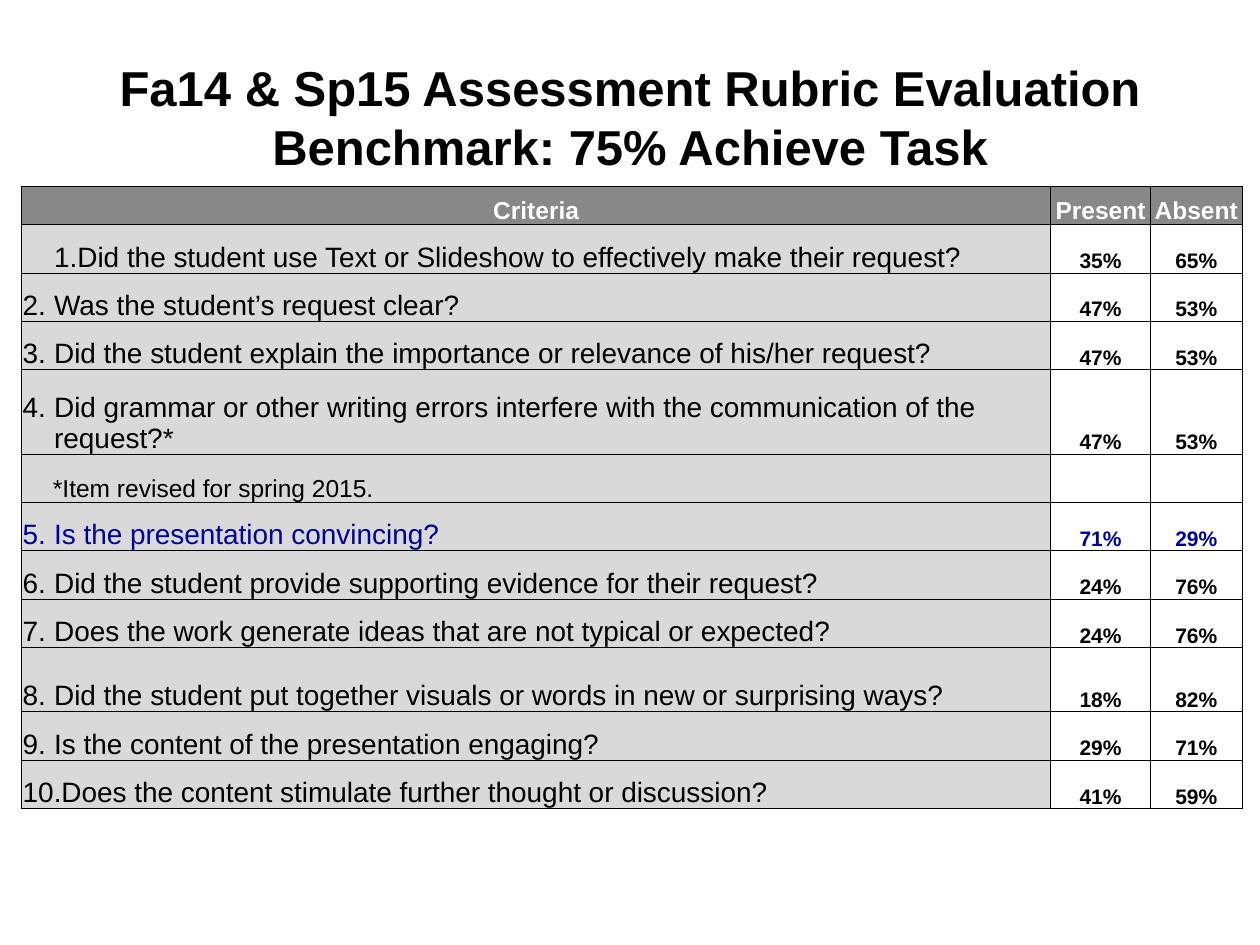
import dataclasses

import lxml.etree
import pptx
import pptx.dml.color
import pptx.enum.text
import pptx.oxml.ns
import pptx.util

ALIGN = pptx.enum.text.PP_ALIGN
ANCHOR = pptx.enum.text.MSO_ANCHOR
COLUMNS, ROWS = 100, 75

NOTE = "*Item revised for spring 2015."
HIGHLIGHT = "Is the presentation convincing?"
HEADER = ("Criteria", "Present", "Absent")
RESULTS = [
    ("Did the student use Text or Slideshow to effectively make their request?", "35%", "65%"),
    ("Was the student’s request clear?", "47%", "53%"),
    ("Did the student explain the importance or relevance of his/her request?", "47%", "53%"),
    ("Did grammar or other writing errors interfere with the communication of the request?*", "47%", "53%"),
    (NOTE, "", ""),
    (HIGHLIGHT, "71%", "29%"),
    ("Did the student provide supporting evidence for their request?", "24%", "76%"),
    ("Does the work generate ideas that are not typical or expected?", "24%", "76%"),
    ("Did the student put together visuals or words in new or surprising ways?", "18%", "82%"),
    ("Is the content of the presentation engaging?", "29%", "71%"),
    ("Does the content stimulate further thought or discussion?", "41%", "59%"),
]
COL_WIDTHS = (81.7, 7.9, 7.3)
HEADER_HEIGHT, ROW_HEIGHT = 3.03, 3.84
TALL_ROWS = {4: 6.7, 9: 5.1}


@dataclasses.dataclass(frozen=True)
class Theme:
    font: str = "Arial"
    ink: str = "000000"
    white: str = "FFFFFF"
    accent: str = "000099"
    header: str = "888888"
    criteria: str = "D9D9D9"
    title_size: int = 28
    item_size: int = 16
    small_size: int = 14
    value_size: int = 12
    thin: float = 0.5
    thick: float = 1


class Deck:
    """Builds slide elements on a grid in one theme."""

    def __init__(self, prs, theme):
        self.prs, self.theme = prs, theme
        self.slide = prs.slides.add_slide(prs.slide_layouts[6])

    def x(self, columns):
        return round(self.prs.slide_width * columns / COLUMNS)

    def y(self, rows):
        return round(self.prs.slide_height * rows / ROWS)

    def text(self, tf, text, size, color, bold=False, align=ALIGN.CENTER):
        p = tf.paragraphs[0]
        p.text = text
        p.alignment = align
        for r in p.runs:
            r.font.name, r.font.size, r.font.bold = self.theme.font, pptx.util.Pt(size), bold
            r.font.color.rgb = pptx.dml.color.RGBColor.from_string(color)
        return p

    def title(self, left, top, width, height, text):
        sp = self.slide.shapes.add_textbox(self.x(left), self.y(top), self.x(width), self.y(height))
        tf = sp.text_frame
        tf.word_wrap = True
        tf.vertical_anchor = ANCHOR.MIDDLE
        self.text(tf, text, self.theme.title_size, self.theme.ink, True)

    def table(self, left, top, widths, heights):
        frame = self.slide.shapes.add_table(
            len(heights), len(widths), self.x(left), self.y(top), self.x(sum(widths)), self.y(sum(heights)))
        table = frame.table
        table.first_row = table.horz_banding = False
        for column, width in zip(table.columns, widths):
            column.width = self.x(width)
        for row, height in zip(table.rows, heights):
            row.height = self.y(height)
        return table

    def cell(self, table, row, col, fill):
        cell = table.cell(row, col)
        cell.vertical_anchor = ANCHOR.BOTTOM
        cell.margin_left = cell.margin_right = cell.margin_top = pptx.util.Inches(0.01)
        cell.margin_bottom = 0
        thick_sides = {"L": col == 0, "T": row == 0}
        for side in "LRTB":
            self.border(cell, side, self.theme.thick if thick_sides.get(side) else self.theme.thin)
        cell.fill.solid()
        cell.fill.fore_color.rgb = pptx.dml.color.RGBColor.from_string(fill)
        return cell.text_frame

    def border(self, cell, side, width):
        qn = pptx.oxml.ns.qn
        tc_pr = cell._tc.get_or_add_tcPr()
        line = lxml.etree.SubElement(tc_pr, qn(f"a:ln{side}"), w=str(pptx.util.Pt(width)))
        solid = lxml.etree.SubElement(line, qn("a:solidFill"))
        lxml.etree.SubElement(solid, qn("a:srgbClr"), val=self.theme.ink)

    def indent(self, p, margin, first=0, number=None):
        p_pr = p._p.get_or_add_pPr()
        p_pr.set("marL", str(pptx.util.Inches(margin)))
        p_pr.set("indent", str(pptx.util.Inches(first)))
        if number:
            qn = pptx.oxml.ns.qn
            lxml.etree.SubElement(p_pr, qn("a:buFont"), typeface=self.theme.font)
            lxml.etree.SubElement(p_pr, qn("a:buAutoNum"), type="arabicPeriod", startAt=str(number))

    def rubric(self, left, top):
        t = self.theme
        heights = [HEADER_HEIGHT] + [TALL_ROWS.get(i, ROW_HEIGHT) for i in range(1, len(RESULTS) + 1)]
        table = self.table(left, top, COL_WIDTHS, heights)
        for col, text in enumerate(HEADER):
            self.text(self.cell(table, 0, col, t.header), text, t.small_size, t.white, True)
        number = 0
        for row, (criterion, *values) in enumerate(RESULTS, 1):
            color = t.accent if criterion == HIGHLIGHT else t.ink
            is_note = criterion == NOTE
            size = t.small_size if is_note else t.item_size
            p = self.text(self.cell(table, row, 0, t.criteria), criterion, size, color, align=ALIGN.LEFT)
            if is_note:
                self.indent(p, 0.24)
            else:
                number += 1
                margin, first = (0, 0.25) if number == 1 else (0.25, -0.25)
                self.indent(p, margin, first, number)
            for col, value in enumerate(values, 1):
                self.text(self.cell(table, row, col, t.white), value, t.value_size, color, True)


def main():
    prs = pptx.Presentation()
    prs.slide_width, prs.slide_height = pptx.util.Inches(10), pptx.util.Inches(7.5)
    s = Deck(prs, Theme())
    s.title(2.5, 3, 95, 12.5, "Fa14 & Sp15 Assessment Rubric Evaluation\nBenchmark: 75% Achieve Task")
    s.rubric(1.7, 14.8)
    prs.save("out.pptx")


if __name__ == "__main__":
    main()
